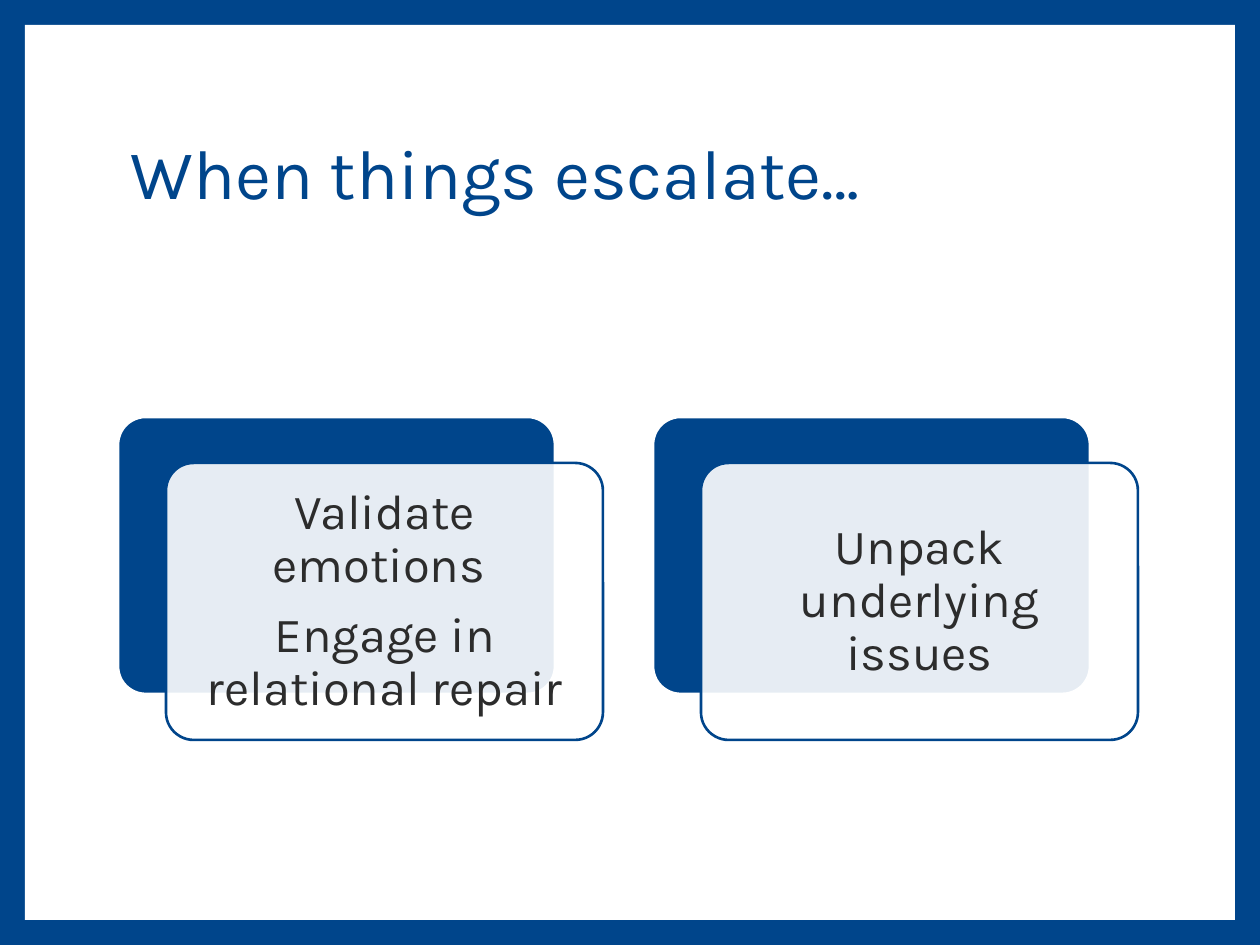
from dataclasses import dataclass

from lxml.etree import SubElement
from pptx import Presentation
from pptx.dml.color import RGBColor
from pptx.enum.shapes import MSO_SHAPE as Shape
from pptx.enum.text import MSO_ANCHOR as Anchor, MSO_AUTO_SIZE as AutoSize, PP_ALIGN as Align
from pptx.oxml.ns import qn
from pptx.util import Emu, Pt

PX_PER_INCH = 126
SLIDE_W, SLIDE_H = 1260, 945
FRAME = 25
CARD_W, CARD_H = 437, 277
CARD_TOP = 417
OFFSET_X, OFFSET_Y = 48, 46
TEXT_MARGIN = 8
TEXT_INSET = 15
COLORS = {"blue": "00458B", "white": "FFFFFF", "text": "2C2C2C"}


@dataclass
class Card:
    left: int
    lines: list[str]


CARDS = [
    Card(118, ["Validate emotions ", "Engage in relational repair"]),
    Card(653, ["Unpack underlying issues"]),
]


def px(n: int) -> Emu:
    return Emu(round(n * 914400 / PX_PER_INCH))


def rgb(name: str) -> RGBColor:
    return RGBColor.from_string(COLORS[name])


def box(x: int, y: int, w: int, h: int) -> tuple[Emu, ...]:
    return px(x), px(y), px(w), px(h)


def write(tf, lines: list[str], *, size: int, color: str, align=Align.LEFT, after: float = 0) -> None:
    tf.word_wrap = True
    tf.auto_size = AutoSize.NONE
    tf.vertical_anchor = Anchor.MIDDLE
    for i, line in enumerate(lines):
        p = tf.paragraphs[0] if i == 0 else tf.add_paragraph()
        p.alignment = align
        p.line_spacing = 0.9
        p.space_before, p.space_after = Pt(0), Pt(after)
        r = p.add_run()
        r.text = line
        r.font.name = "Karla"
        r.font.size = Pt(size)
        r.font.color.rgb = rgb(color)


def add_panel(slide, kind, bounds, fill: str, line: str | None = None, opacity: int = 100):
    sp = slide.shapes.add_shape(kind, *bounds)
    sp.shadow.inherit = False
    sp.fill.solid()
    sp.fill.fore_color.rgb = rgb(fill)
    if opacity < 100:
        color = sp.fill._xPr.find(qn("a:solidFill"))[0]
        SubElement(color, qn("a:alpha"), val=str(opacity * 1000))
    if line:
        sp.line.color.rgb = rgb(line)
        sp.line.width = Pt(1.5)
    else:
        sp.line.fill.background()
    return sp


def add_card(slide, card: Card) -> None:
    """Draw a solid card, a translucent one offset over it, and the text."""
    x, y = card.left + OFFSET_X, CARD_TOP + OFFSET_Y
    back = box(card.left, CARD_TOP, CARD_W, CARD_H)
    front = box(x, y, CARD_W, CARD_H)
    for sp in (add_panel(slide, Shape.ROUNDED_RECTANGLE, back, "blue", "white"),
               add_panel(slide, Shape.ROUNDED_RECTANGLE, front, "white", "blue", 90)):
        sp.adjustments[0] = 0.1
    m = TEXT_MARGIN
    tf = slide.shapes.add_textbox(*box(x + m, y + m, CARD_W - 2 * m, CARD_H - 2 * m)).text_frame
    tf.margin_left = tf.margin_right = tf.margin_top = tf.margin_bottom = px(TEXT_INSET)
    write(tf, card.lines, size=28, color="text", align=Align.CENTER, after=9.8)


def main() -> None:
    prs = Presentation()
    prs.slide_width, prs.slide_height = px(SLIDE_W), px(SLIDE_H)
    slide = prs.slides.add_slide(prs.slide_layouts.get_by_name("Title Only"))
    slide.background.fill.solid()
    slide.background.fill.fore_color.rgb = rgb("blue")

    title = slide.shapes.title
    paper = add_panel(slide, Shape.RECTANGLE,
                      box(FRAME, FRAME, SLIDE_W - 2 * FRAME, SLIDE_H - 2 * FRAME), "white")
    title._element.addprevious(paper._element)
    title.left, title.top, title.width, title.height = box(118, 84, 1021, 186)
    write(title.text_frame, ["When things escalate…"], size=40, color="blue")

    for card in CARDS:
        add_card(slide, card)
    prs.save("out.pptx")


if __name__ == "__main__":
    main()
